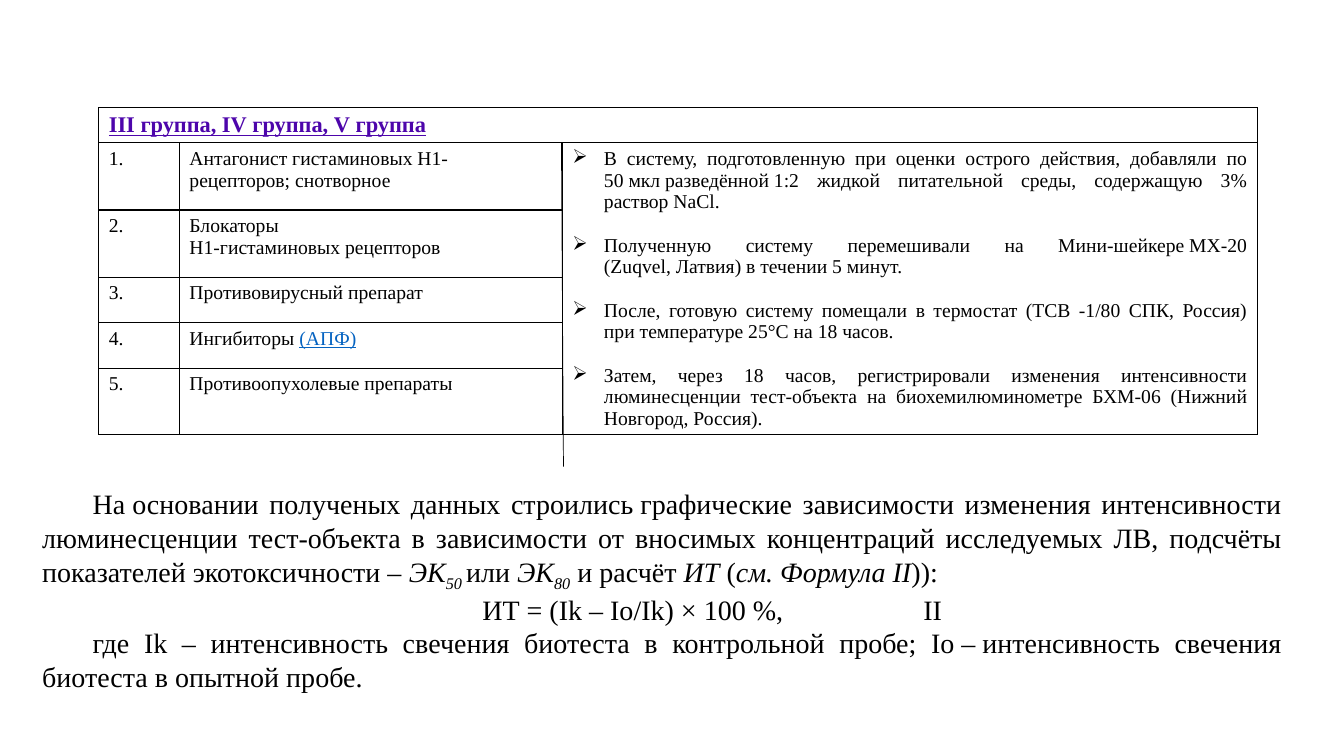
from dataclasses import dataclass

from lxml import etree
from pptx import Presentation
from pptx import util as u
from pptx.dml.color import RGBColor
from pptx.enum import shapes, text
from pptx.oxml import ns

ALIGN = text.PP_ALIGN


@dataclass(frozen=True)
class Theme:
    font: str = "Times New Roman"
    ink: str = "000000"
    paper: str = "FFFFFF"
    heading: str = "4D05AB"
    link: str = "0563C1"
    heading_size: float = 16
    table_size: float = 14
    body_size: float = 20
    bullet_gap: float = 15.5
    border: float = 1
    divider: float = 0.5


THEME = Theme()


@dataclass(frozen=True)
class Span:
    """A run of text; "~" stands for a non-breaking space."""
    words: str
    italic: bool = False
    subscript: bool = False
    link: bool = False


@dataclass(frozen=True)
class Para:
    spans: tuple[Span, ...]
    align: ALIGN = ALIGN.JUSTIFY
    size: float = THEME.table_size
    color: str = THEME.ink
    heading: bool = False
    bullet: bool = False
    indent: float = 0
    tabs: tuple[float, ...] = ()
    space_after: float = 0


GRID_COLUMNS, GRID_ROWS = 160, 90
SLIDE_WIDTH, SLIDE_HEIGHT = u.Inches(13.333), u.Inches(7.5)

TABLE_LEFT, TABLE_TOP = 11.76, 12.84
TABLE_COLUMNS = (9.6, 45.6, 82.8)
TABLE_ROWS = (4.17, 8, 8, 5.43, 5.43, 7.9)
BULLET_INDENT = 3.75
BODY_INDENT = 6
FORMULA_TABS = (52.4, 104.9)

GROUPS = "III~группа,~IV~группа,~V~группа"
DRUGS = (
    ((Span("Антагонист~гистаминовых~Н1-рецепторов;~снотворное"),),),
    ((Span("Блокаторы"),), (Span("Н1-гистаминовых рецепторов"),)),
    ((Span("Противовирусный препарат"),),),
    ((Span("Ингибиторы~"), Span("(АПФ)", link=True)),),
    ((Span("Противоопухолевые препараты"),),),
)
STEPS = (
    "В систему, подготовленную при оценки острого действия, добавляли по "
    "50~мкл~разведённой~1:2 жидкой питательной среды, содержащую 3% раствор~NaCl.",
    "Полученную систему перемешивали на Мини-шейкере~MX-20 "
    "(Zuqvel,~Латвия) в течении 5~минут.",
    "После, готовую систему помещали в термостат (ТСВ -1/80 СПК, Россия) "
    "при температуре 25°С~на 18 часов.",
    "Затем, через 18 часов, регистрировали изменения интенсивности люминесценции "
    "тест-объекта на биохемилюминометре БХМ-06 (Нижний Новгород, Россия).",
)
BASIS = (
    Span("На~основании полученых данных строились~графические зависимости изменения "
         "интенсивности люминесценции тест-объекта в зависимости от вносимых "
         "концентраций исследуемых ЛВ, подсчёты показателей экотоксичности – "),
    Span("ЭК", italic=True),
    Span("50 ", italic=True, subscript=True),
    Span("или "),
    Span("ЭК", italic=True),
    Span("80", italic=True, subscript=True),
    Span(" и расчёт "),
    Span("ИТ", italic=True),
    Span(" ("),
    Span("см. Формула II", italic=True),
    Span(")):"),
)
FORMULA = (Span("\tИТ = (Ik – Io/Ik) × 100 %,\tII"),)
LEGEND = (
    Span("где Ik – интенсивность свечения биотеста в контрольной пробе; "
         "Io~–~интенсивность свечения биотеста в опытной пробе."),
)


def across(columns: float) -> int:
    return round(SLIDE_WIDTH * columns / GRID_COLUMNS)


def down(rows: float) -> int:
    return round(SLIDE_HEIGHT * rows / GRID_ROWS)


def add_child(parent, tag: str, **attributes):
    child = etree.SubElement(parent, ns.qn(tag))
    for name, value in attributes.items():
        child.set(name, str(value))
    return child


def write_paragraph(paragraph, para: Para) -> None:
    properties = paragraph._p.get_or_add_pPr()
    if para.bullet:
        properties.set("marL", str(across(BULLET_INDENT)))
        properties.set("indent", str(-across(BULLET_INDENT)))
        add_child(properties, "a:buChar", char="➢")
    elif para.indent:
        properties.set("indent", str(across(para.indent)))
    if para.tabs:
        stops = add_child(properties, "a:tabLst")
        for stop in para.tabs:
            add_child(stops, "a:tab", pos=across(stop), algn="l")
    paragraph.alignment = para.align
    paragraph.space_after = u.Pt(para.space_after)
    font = paragraph.font
    font.name = THEME.font
    font.size = u.Pt(para.size)
    font.bold = font.underline = para.heading
    font.color.rgb = RGBColor.from_string(para.color)
    for span in para.spans:
        run = paragraph.add_run()
        run.text = span.words.replace("~", chr(160))
        if span.italic:
            run.font.italic = True
        if span.link:
            run.font.underline = True
            run.font.color.rgb = RGBColor.from_string(THEME.link)
        if span.subscript:
            run._r.get_or_add_rPr().set("baseline", "-25000")


def write_frame(frame, paras: list[Para]) -> None:
    for index, para in enumerate(paras):
        write_paragraph(frame.paragraphs[0] if index == 0 else frame.add_paragraph(), para)


def set_borders(cell, right: str) -> None:
    properties = cell._tc.get_or_add_tcPr()
    for side, color in zip("LRTB", (THEME.ink, right, THEME.ink, THEME.ink)):
        line = add_child(properties, f"a:ln{side}", w=u.Pt(THEME.border))
        add_child(add_child(line, "a:solidFill"), "a:srgbClr", val=color)


def add_groups_table(page) -> None:
    frame = page.shapes.add_table(
        len(TABLE_ROWS), len(TABLE_COLUMNS), across(TABLE_LEFT), down(TABLE_TOP),
        across(sum(TABLE_COLUMNS)), down(sum(TABLE_ROWS)))
    table = frame.table
    table.first_row = table.horz_banding = False
    for column, width in zip(table.columns, TABLE_COLUMNS):
        column.width = across(width)
    for row, height in zip(table.rows, TABLE_ROWS):
        row.height = down(height)
    for row_index, row in enumerate(table.rows):
        for column_index, cell in enumerate(row.cells):
            open_side = column_index == 1 and row_index > 1
            set_borders(cell, THEME.paper if open_side else THEME.ink)
            cell.fill.background()
    table.cell(0, 0).merge(table.cell(0, 2))
    table.cell(1, 2).merge(table.cell(len(DRUGS), 2))

    write_frame(table.cell(0, 0).text_frame, [
        Para((Span(GROUPS),), size=THEME.heading_size, color=THEME.heading, heading=True)])
    for number, lines in enumerate(DRUGS, start=1):
        write_frame(table.cell(number, 0).text_frame, [Para((Span(f"{number}."),))])
        write_frame(table.cell(number, 1).text_frame,
                    [Para(line, ALIGN.LEFT) for line in lines])
    write_frame(table.cell(1, 2).text_frame, [
        Para((Span(step),), bullet=True,
             space_after=0 if step == STEPS[-1] else THEME.bullet_gap)
        for step in STEPS])


def add_divider(page) -> None:
    line = page.shapes.add_connector(
        shapes.MSO_CONNECTOR.STRAIGHT, across(66.84), down(17.04), across(67.08), down(55.56))
    line.line.color.rgb = RGBColor.from_string(THEME.ink)
    line.line.width = u.Pt(THEME.divider)
    add_child(line._element.spPr, "a:effectLst")


def add_body(page) -> None:
    box = page.shapes.add_textbox(across(3.84), down(57.36), across(150), down(25.44))
    box.text_frame.word_wrap = True
    write_frame(box.text_frame, [
        Para(BASIS, size=THEME.body_size, indent=BODY_INDENT),
        Para(FORMULA, ALIGN.LEFT, THEME.body_size, tabs=FORMULA_TABS),
        Para(LEGEND, size=THEME.body_size, indent=BODY_INDENT)])


def main() -> None:
    deck = Presentation()
    deck.slide_width, deck.slide_height = SLIDE_WIDTH, SLIDE_HEIGHT
    page = deck.slides.add_slide(deck.slide_layouts[6])
    add_groups_table(page)
    add_divider(page)
    add_body(page)
    deck.save("out.pptx")


if __name__ == "__main__":
    main()
